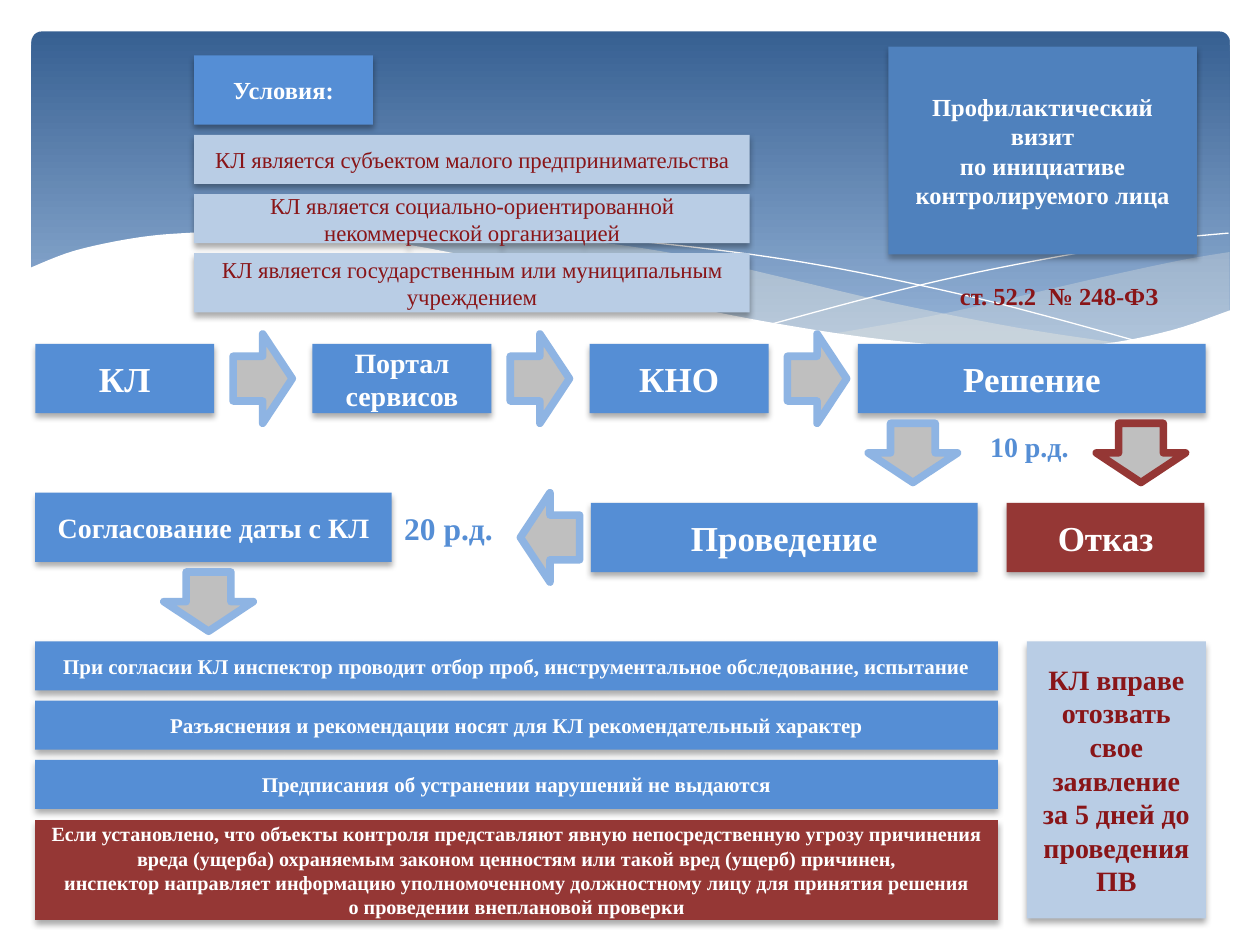
from lxml.etree import SubElement
from pptx import Presentation
from pptx.dml.color import RGBColor
from pptx.enum.shapes import MSO_SHAPE as Kind
from pptx.enum.text import MSO_ANCHOR as Anchor, MSO_AUTO_SIZE as Fit, PP_ALIGN as Align
from pptx.oxml.ns import qn
from pptx.util import Inches, Pt

FONT = "Times New Roman"
HUES = {
    "deep": "376092", "mist": "95B3D7", "cream": "EEECE1", "white": "FFFFFF",
    "head": "4F81BD", "blue": "558ED5", "pale": "B9CDE5", "wine": "891518",
    "red": "953735", "grey": "BFBFBF", "sky": "8EB4E3", "black": "000000",
}
SWELL = [(0.23, 2.13), (0.59, 1.99), (1.06, 1.89), (1.46, 1.85), (1.93, 1.84),
         (2.71, 1.88), (3.4, 1.97), (4.47, 2.2), (5.55, 2.45), (6.48, 2.62),
         (7.26, 2.72), (8.09, 2.77), (8.75, 2.73), (9.3, 2.62), (9.77, 2.46)]
RISE_TOP = [(9.76, 2), (9.35, 2.07), (8.61, 2.23), (7.53, 2.48), (6.61, 2.65)]
RISE_LOW = [(6.61, 2.65), (7.32, 2.74), (8.14, 2.78), (8.89, 2.72),
            (9.42, 2.59), (9.76, 2.47)]
FALL_TOP = [(8.93, 2.73), (8.07, 2.6), (7.06, 2.4), (6.29, 2.22), (5.55, 2.05),
            (4.89, 1.94), (4.2, 1.87), (3.61, 1.85), (2.86, 1.91)]
FALL_LOW = [(2.86, 1.91), (3.62, 2.03), (4.49, 2.22), (5.66, 2.48), (6.65, 2.66),
            (7.48, 2.76), (8.18, 2.78), (8.93, 2.73)]
DOWN_LINE = [(3.09, 1.95), (3.53, 1.89), (4.16, 1.87), (4.89, 1.9), (5.82, 2),
             (6.65, 2.13), (7.6, 2.33), (8.31, 2.51), (9.07, 2.72)]
UP_LINE = [(6.13, 2.57), (6.95, 2.35), (7.76, 2.16), (8.66, 1.99),
           (9.24, 1.9), (9.75, 1.85)]


def hue(name):
    return RGBColor.from_string(HUES[name])


def place(shape, left, top, width, height):
    shape.left, shape.top = Inches(left), Inches(top)
    shape.width, shape.height = Inches(width), Inches(height)


def paint(shape, name, alpha=None):
    shape.fill.solid()
    shape.fill.fore_color.rgb = hue(name)
    shape.line.fill.background()
    shape.shadow.inherit = False
    if alpha:
        tint = shape.element.spPr.find(qn("a:solidFill"))[0]
        SubElement(tint, qn("a:alpha"), val=str(alpha * 1000))


def shade(shape):
    effects = shape.element.spPr.find(qn("a:effectLst"))
    outer = SubElement(effects, qn("a:outerShdw"), blurRad=str(Pt(3.5)),
                       dist=str(Pt(2.2)), dir="5400000", rotWithShape="0")
    tint = SubElement(outer, qn("a:srgbClr"), val=HUES["black"])
    SubElement(tint, qn("a:alpha"), val="32000")


def write(frame, text, size, name, bold=True, align=Align.CENTER):
    for count, line in enumerate(text.split("\n")):
        para = frame.add_paragraph() if count else frame.paragraphs[0]
        para.alignment = align
        for step, part in enumerate(line.split("\v")):
            if step:
                para.add_line_break()
            run = para.add_run()
            run.text = part
            font = run.font
            font.name, font.size, font.bold = FONT, Pt(size), bold
            font.color.rgb = hue(name)


def box(slide, at, text, size, fill="blue", ink="white", bold=True):
    shape = slide.shapes.add_shape(Kind.RECTANGLE, *map(Inches, at))
    paint(shape, fill)
    shade(shape)
    shape.text_frame.word_wrap = True
    shape.text_frame.vertical_anchor = Anchor.MIDDLE
    write(shape.text_frame, text, size, ink, bold)


def label(slide, at, text, size, ink="blue"):
    frame = slide.shapes.add_textbox(*map(Inches, at)).text_frame
    frame.word_wrap = False
    frame.auto_size = Fit.SHAPE_TO_FIT_TEXT
    write(frame, text, size, ink, align=Align.LEFT)


def arrow(slide, left, top, turn=0, edge="sky"):
    shape = slide.shapes.add_shape(Kind.RIGHT_ARROW, Inches(left), Inches(top),
                                   Inches(0.47), Inches(0.71))
    paint(shape, "grey")
    shape.rotation = turn
    shape.line.color.rgb = hue(edge)
    shape.line.width = Pt(4.33)


def curve(knots, steps=6):
    ends = [knots[0], *knots, knots[-1]]
    points = [knots[0]]
    for a, b, c, d in zip(ends, ends[1:], ends[2:], ends[3:]):
        for step in range(1, steps + 1):
            t = step / steps
            points.append(tuple(
                (2 * q + (r - p) * t + (2 * p - 5 * q + 4 * r - s) * t ** 2
                 + (3 * q - p - 3 * r + s) * t ** 3) / 2
                for p, q, r, s in zip(a, b, c, d)))
    return points


def trace(slide, points, close=True):
    spots = [(Inches(x), Inches(y)) for x, y in points]
    pen = slide.shapes.build_freeform(*spots[0])
    pen.add_line_segments(spots[1:], close=close)
    return pen.convert_to_shape()


def thread(slide, knots):
    shape = trace(slide, curve(knots), close=False)
    shape.fill.background()
    shape.line.color.rgb = hue("white")
    shape.line.width = Pt(0)
    shape.shadow.inherit = False


def scene(slide):
    panel = slide.shapes.add_shape(Kind.ROUNDED_RECTANGLE, Inches(0.25), Inches(0.25),
                                   Inches(9.51), Inches(2.7))
    panel.adjustments[0] = 0.03
    paint(panel, "deep")
    panel.fill.gradient()
    panel.fill.gradient_angle = 270
    for stop, name, spot in zip(panel.fill.gradient_stops, ("deep", "mist"), (0, 0.9)):
        stop.color.rgb = hue(name)
        stop.position = spot
    paint(trace(slide, curve(RISE_TOP) + curve(RISE_LOW)), "cream", 29)
    paint(trace(slide, curve(FALL_TOP) + curve(FALL_LOW)), "cream", 40)
    thread(slide, DOWN_LINE)
    thread(slide, UP_LINE)
    paint(trace(slide, curve(SWELL) + [(9.77, 3.29), (0.23, 3.29)]), "white")


def head(slide):
    title = slide.shapes.title
    title.element.getparent().append(title.element)
    place(title, 7.05, 0.37, 2.45, 1.65)
    paint(title, "head")
    shade(title)
    frame = title.text_frame
    frame.auto_size = Fit.NONE
    frame.word_wrap = True
    frame.vertical_anchor = Anchor.MIDDLE
    write(frame, "Профилактический визит\vпо инициативе контролируемого лица", 14, "white")
    label(slide, (7.52, 2.18, 1.79, 0.34), "ст. 52.2  № 248-ФЗ", 14, "wine")


def terms(slide):
    box(slide, (1.54, 0.44, 1.42, 0.55), "Условия:", 14)
    rows = [("КЛ является субъектом малого предпринимательства", 0.39),
            ("КЛ является социально-ориентированной некоммерческой организацией", 0.39),
            ("КЛ является государственным или муниципальным учреждением", 0.47)]
    for row, (text, height) in enumerate(rows):
        box(slide, (1.54, 1.07 + 0.47 * row, 4.41, height), text, 13, "pale", "wine", False)


def flow(slide):
    for step, (text, size) in enumerate([("КЛ", 20), ("Портал сервисов", 16), ("КНО", 20)]):
        left = 0.28 + 2.2 * step
        box(slide, (left, 2.73, 1.42, 0.55), text, size)
        arrow(slide, left + 1.57, 2.65)
    box(slide, (6.81, 2.73, 2.76, 0.55), "Решение", 20)
    arrow(slide, 8.82, 3.24, 90, "red")
    box(slide, (7.99, 3.99, 1.57, 0.55), "Отказ", 20, "red")
    arrow(slide, 7.01, 3.24, 90)
    label(slide, (7.76, 3.36, 0.83, 0.37), "10 р.д.", 16)
    box(slide, (4.69, 3.99, 3.07, 0.55), "Проведение", 20)
    arrow(slide, 4.13, 3.91, 180)
    label(slide, (3.11, 3.99, 0.92, 0.4), "20 р.д.", 18)
    box(slide, (0.28, 3.91, 2.83, 0.55), "Согласование даты с КЛ", 16)
    arrow(slide, 1.42, 4.42, 90)


def rules(slide):
    rows = ["При согласии КЛ инспектор проводит отбор проб, инструментальное обследование, испытание",
            "Разъяснения и рекомендации носят для КЛ рекомендательный характер",
            "Предписания об устранении нарушений не выдаются"]
    for row, text in enumerate(rows):
        box(slide, (0.28, 5.09 + 0.47 * row, 7.64, 0.39), text, 12)
    box(slide, (0.28, 6.51, 7.64, 0.79),
        "Если установлено, что объекты контроля представляют явную непосредственную угрозу "
        "причинения вреда (ущерба) охраняемым законом ценностям или такой вред (ущерб) причинен,\n"
        "инспектор направляет информацию уполномоченному должностному лицу для принятия решения\n"
        "о проведении внеплановой проверки", 11.5, "red")
    box(slide, (8.15, 5.09, 1.42, 2.2),
        "КЛ вправе отозвать свое заявление за 5 дней до проведения ПВ", 16, "pale", "wine")


def main():
    deck = Presentation()
    deck.slide_width, deck.slide_height = Inches(10), Inches(7.5)
    slide = deck.slides.add_slide(deck.slide_layouts[5])
    for part in (scene, head, terms, flow, rules):
        part(slide)
    deck.save("out.pptx")


if __name__ == "__main__":
    main()
